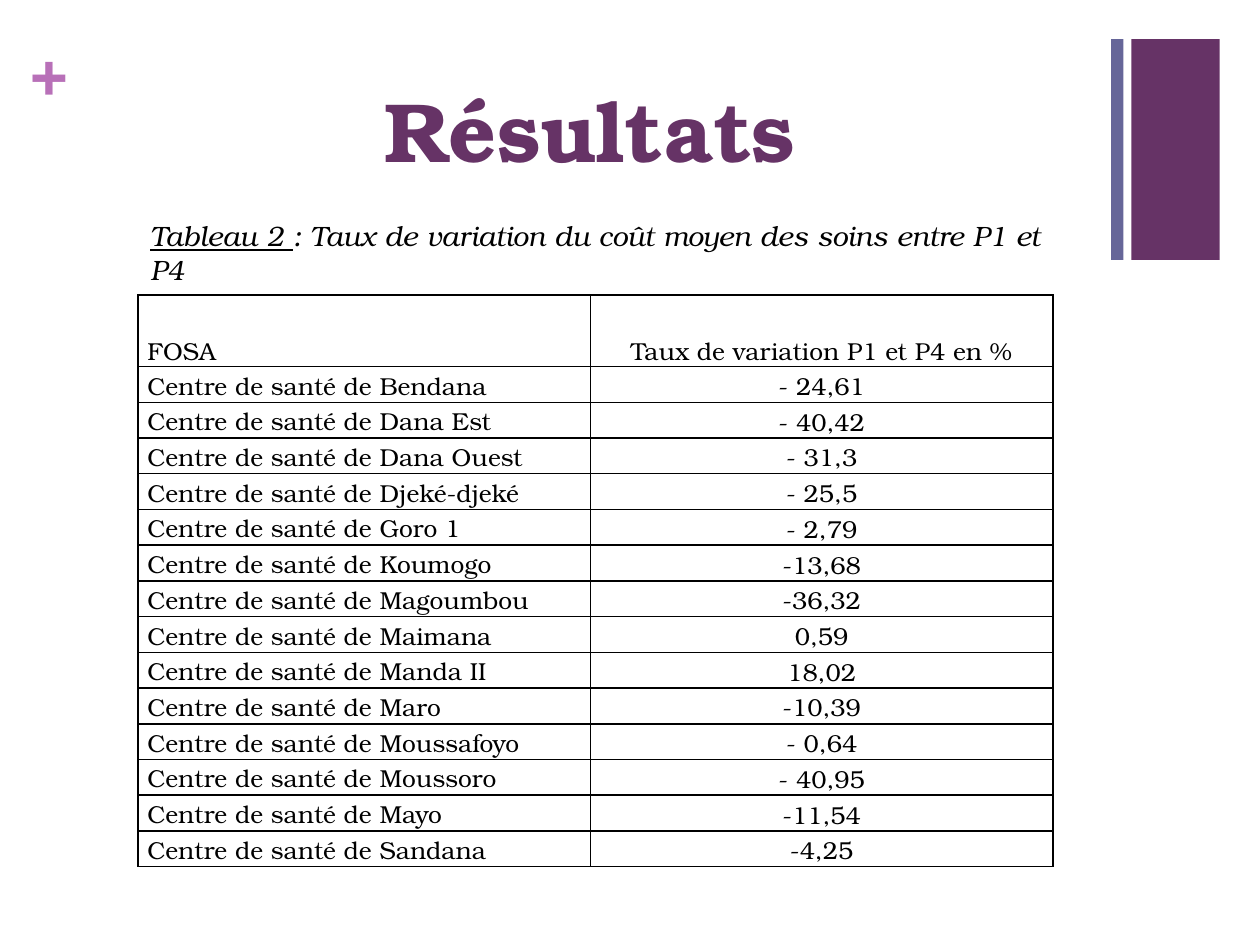
from lxml.etree import SubElement
from pptx import Presentation
from pptx.dml.color import RGBColor
from pptx.enum.shapes import MSO_SHAPE
from pptx.enum.text import MSO_ANCHOR, PP_ALIGN
from pptx.oxml.ns import qn
from pptx.util import Cm, Pt

FONT = "TeX Gyre Bonum"
PURPLE = "663366"
BLACK = "000000"


def set_color(color_format, value):
    color_format.rgb = RGBColor.from_string(value)


def style(paragraph, size, color, alignment=PP_ALIGN.LEFT):
    paragraph.alignment = alignment
    paragraph.font.name = FONT
    paragraph.font.size = Pt(size)
    set_color(paragraph.font.fill.fore_color if paragraph.font.fill.type
              else paragraph.font.color, color)


presentation = Presentation()
presentation.slide_width = Cm(25.4)
presentation.slide_height = Cm(19.05)
slide = presentation.slides.add_slide(presentation.slide_layouts[6])

# Corner bars
for left, width, color in [(22.81, 1.78, PURPLE), (22.4, 0.25, "666699")]:
    bar = slide.shapes.add_shape(
        MSO_SHAPE.RECTANGLE, Cm(left), Cm(0.79), Cm(width), Cm(4.45))
    bar.shadow.inherit = False
    bar.fill.solid()
    set_color(bar.fill.fore_color, color)
    bar.line.fill.background()

# Plus sign
plus_box = slide.shapes.add_textbox(Cm(0.61), Cm(0.64), Cm(0.74), Cm(1.55))
plus_frame = plus_box.text_frame
plus_frame.margin_left = plus_frame.margin_right = 0
plus_frame.margin_top = plus_frame.margin_bottom = 0
plus = plus_frame.paragraphs[0]
plus.text = "+"
style(plus, 36, "B870B8")
plus.font.bold = True

# Title
title_box = slide.shapes.add_textbox(Cm(1.4), Cm(1.35), Cm(20.98), Cm(3.1))
title_box.text_frame.word_wrap = True
title_box.text_frame.margin_top = Cm(0.23)
title = title_box.text_frame.paragraphs[0]
title.text = "Résultats"
style(title, 48, PURPLE, PP_ALIGN.CENTER)
title.font.bold = True

# Table
rows = [
    ("FOSA", "Taux de variation P1 et P4 en %"),
    ("Centre de santé de Bendana", "- 24,61"),
    ("Centre de santé de Dana Est", "- 40,42"),
    ("Centre de santé de Dana Ouest", "- 31,3"),
    ("Centre de santé de Djeké-djeké", "- 25,5"),
    ("Centre de santé de Goro 1", "- 2,79"),
    ("Centre de santé de Koumogo", "-13,68"),
    ("Centre de santé de Magoumbou", "-36,32"),
    ("Centre de santé de Maimana", "0,59"),
    ("Centre de santé de Manda II", "18,02"),
    ("Centre de santé de Maro", "-10,39"),
    ("Centre de santé de Moussafoyo", "- 0,64"),
    ("Centre de santé de Moussoro", "- 40,95"),
    ("Centre de santé de Mayo", "-11,54"),
    ("Centre de santé de Sandana", "-4,25"),
]
header_height, row_height = Cm(1.44), Cm(0.72)
table = slide.shapes.add_table(
    len(rows), 2, Cm(2.78), Cm(5.95), Cm(18.45),
    header_height + row_height * (len(rows) - 1)).table
table.columns[0].width = Cm(9.12)
table.columns[1].width = Cm(9.33)

for row_index, values in enumerate(rows):
    is_header = row_index == 0
    table.rows[row_index].height = header_height if is_header else row_height
    for column_index, value in enumerate(values):
        cell = table.cell(row_index, column_index)
        cell.margin_left = cell.margin_right = Cm(0.19)
        cell.margin_top = cell.margin_bottom = 0
        if is_header:
            cell.vertical_anchor = MSO_ANCHOR.BOTTOM
        else:
            cell.vertical_anchor = (MSO_ANCHOR.TOP, MSO_ANCHOR.MIDDLE)[column_index]
        paragraph = cell.text_frame.paragraphs[0]
        paragraph.text = value
        style(paragraph, 14, BLACK, (PP_ALIGN.LEFT, PP_ALIGN.CENTER)[column_index])
        paragraph.font.bold = False
        paragraph.line_spacing = 1.07
        # Borders come before the fill in the cell properties
        properties = cell._tc.get_or_add_tcPr()
        for side in ("a:lnL", "a:lnR", "a:lnT", "a:lnB"):
            border = SubElement(properties, qn(side), w=str(Pt(1)))
            fill = SubElement(border, qn("a:solidFill"))
            SubElement(fill, qn("a:srgbClr"), val=BLACK)
        cell.fill.background()

# Table caption
caption_box = slide.shapes.add_textbox(Cm(2.78), Cm(4.29), Cm(18.45), Cm(1.7))
caption_box.text_frame.word_wrap = True
caption = caption_box.text_frame.paragraphs[0]
label = caption.add_run()
label.text = "Tableau 2 "
label.font.underline = True
caption.add_run().text = ": Taux de variation du coût moyen des soins entre P1 et P4"
style(caption, 16, BLACK, PP_ALIGN.JUSTIFY)
caption.font.italic = True

presentation.save("out.pptx")
